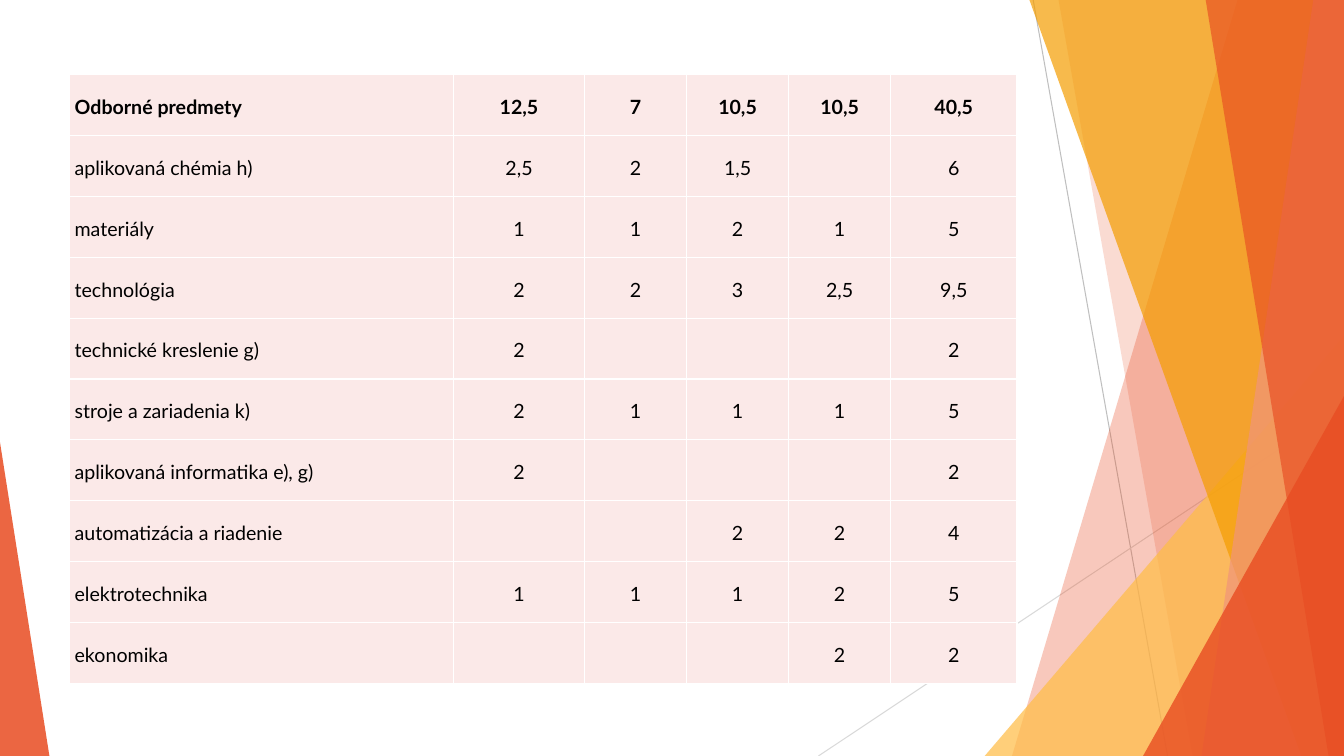
from lxml import etree
from pptx import Presentation
from pptx import util as u
from pptx.dml import color
from pptx.enum import shapes, text
from pptx.oxml import ns

COLORS = {
    "red": "E84C22", "salmon": "F1947A", "orange": "F49D00", "yellow": "FFBD47",
    "line_dark": "BFBFBF", "line_light": "D9D9D9",
    "cell": "FBE9E8", "border": "FFFFFF", "text": "000000",
}
WIDTH, HEIGHT = 960, 540
BLEED_TOP = -0.7

COLUMN_WIDTHS = [274.3, 93.6, 72.9, 72.9, 72.9, 90.2]
ROW_HEIGHT = 43.5
SUBJECTS = [
    ["Odborné predmety", "12,5", "7", "10,5", "10,5", "40,5"],
    ["aplikovaná chémia h)", "2,5", "2", "1,5", "", "6"],
    ["materiály", "1", "1", "2", "1", "5"],
    ["technológia", "2", "2", "3", "2,5", "9,5"],
    ["technické kreslenie g)", "2", "", "", "", "2"],
    ["stroje a zariadenia k)", "2", "1", "1", "1", "5"],
    ["aplikovaná informatika e), g)", "2", "", "", "", "2"],
    ["automatizácia a riadenie", "", "", "2", "2", "4"],
    ["elektrotechnika", "1", "1", "1", "2", "5"],
    ["ekonomika", "", "", "", "2", "2"],
]


class SlideBuilder:
    font = "Lato"
    size = 14

    def __init__(self, slide):
        self.slide = slide

    def rgb(self, name):
        return color.RGBColor.from_string(COLORS[name])

    def paint(self, shape, name, opacity):
        shape.shadow.inherit = False
        shape.line.fill.background()
        shape.fill.solid()
        shape.fill.fore_color.rgb = self.rgb(name)
        hue = shape.fill._xPr.find(".//" + ns.qn("a:srgbClr"))
        etree.SubElement(hue, ns.qn("a:alpha"), val=str(opacity * 1000))

    def line(self, start, end, name):
        connector = self.slide.shapes.add_connector(
            shapes.MSO_CONNECTOR.STRAIGHT, *map(u.Pt, start + end))
        connector.line.color.rgb = self.rgb(name)
        connector.line.width = u.Pt(0.75)
        properties = connector._element.spPr
        etree.SubElement(properties, ns.qn("a:effectLst"))

    def right_band(self, top_x, bottom_x, name, opacity):
        points = [(WIDTH, BLEED_TOP), (WIDTH, HEIGHT), (bottom_x, HEIGHT)]
        builder = self.slide.shapes.build_freeform(u.Pt(top_x), u.Pt(BLEED_TOP))
        builder.add_line_segments([(u.Pt(x), u.Pt(y)) for x, y in points])
        self.paint(builder.convert_to_shape(), name, opacity)

    def triangle(self, left, top, width, apex, name, opacity):
        shape = self.slide.shapes.add_shape(
            shapes.MSO_SHAPE.ISOSCELES_TRIANGLE,
            u.Pt(left), u.Pt(top), u.Pt(width), u.Pt(HEIGHT - top))
        shape.adjustments[0] = apex
        self.paint(shape, name, opacity)

    def cell(self, cell, content, centered, bold):
        cell.margin_left = cell.margin_right = u.Pt(3.6)
        cell.margin_top = cell.margin_bottom = 0
        cell.vertical_anchor = text.MSO_ANCHOR.MIDDLE
        properties = cell._tc.get_or_add_tcPr()
        for side in ("lnL", "lnR", "lnT", "lnB"):
            border = etree.SubElement(properties, ns.qn("a:" + side), w=str(u.Pt(1)))
            fill = etree.SubElement(border, ns.qn("a:solidFill"))
            etree.SubElement(fill, ns.qn("a:srgbClr"), val=COLORS["border"])
        cell.fill.solid()
        cell.fill.fore_color.rgb = self.rgb("cell")
        cell.text_frame.text = content
        paragraph = cell.text_frame.paragraphs[0]
        paragraph.line_spacing = 1.15
        paragraph.alignment = text.PP_ALIGN.CENTER if centered else text.PP_ALIGN.LEFT
        for run in paragraph.runs:
            run.font.name = self.font
            run.font.size = u.Pt(self.size)
            run.font.bold = bold
            run.font.color.rgb = self.rgb("text")

    def table(self, left, top, rows):
        frame = self.slide.shapes.add_table(
            len(rows), len(COLUMN_WIDTHS), u.Pt(left), u.Pt(top),
            u.Pt(sum(COLUMN_WIDTHS)), u.Pt(ROW_HEIGHT * len(rows)))
        table = frame.table
        table.first_row = table.horz_banding = False
        for column, width in zip(table.columns, COLUMN_WIDTHS):
            column.width = u.Pt(width)
        for i, values in enumerate(rows):
            table.rows[i].height = u.Pt(ROW_HEIGHT)
            for j, value in enumerate(values):
                self.cell(table.cell(i, j), value, centered=j > 0, bold=i == 0)


def main():
    presentation = Presentation()
    presentation.slide_width, presentation.slide_height = u.Pt(WIDTH), u.Pt(HEIGHT)
    builder = SlideBuilder(presentation.slides.add_slide(presentation.slide_layouts[6]))

    builder.line((738, 0), (834, HEIGHT), "line_dark")
    builder.line((WIDTH, 290), (584.6, HEIGHT), "line_light")
    builder.right_band(884.2, 722.9, "red", 30)
    builder.right_band(756, 851.8, "red", 20)
    builder.triangle(703.4, 239.8, 256.6, 1, "yellow", 72)
    builder.right_band(735.1, 929.5, "orange", 70)
    builder.right_band(938.2, 858.2, "salmon", 70)
    builder.right_band(861.1, 949, "red", 65)
    builder.triangle(816.5, 283, 143.5, 1, "red", 80)
    builder.triangle(0, 316, 35.3, 0, "red", 85)
    builder.table(49.7, 53.3, SUBJECTS)

    presentation.save("out.pptx")


if __name__ == "__main__":
    main()
